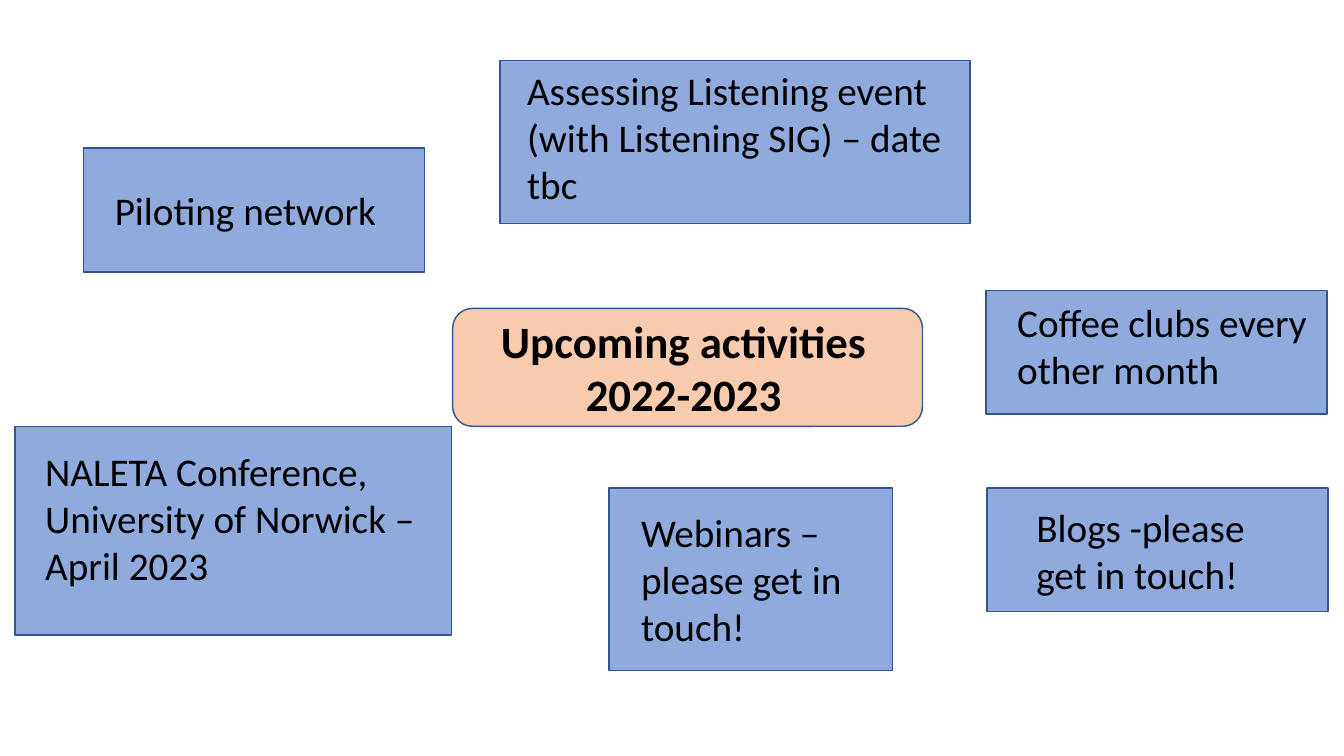
from typing import NamedTuple

from pptx import Presentation
from pptx.dml.color import RGBColor
from pptx.enum.shapes import MSO_SHAPE as Preset
from pptx.enum.text import MSO_AUTO_SIZE as AutoSize, PP_ALIGN as Align
from pptx.slide import Slide
from pptx.util import Inches, Pt

COLOURS = {
    "activity": "8FAADC",
    "title": "F8CBAD",
    "outline": "325491",
    "text": "000000",
}
ACTIVITY_FONT = {"name": "Calibri", "size": Pt(28), "bold": False}
TITLE_FONT = {"name": "Calibri", "size": Pt(32), "bold": True}


class Area(NamedTuple):
    left: float
    top: float
    width: float
    height: float


class Card(NamedTuple):
    wording: str
    frame: Area
    label: Area
    preset: Preset = Preset.RECTANGLE
    fill: str = "activity"
    font: dict = ACTIVITY_FONT
    align: Align = Align.LEFT


CARDS = [
    Card("Assessing Listening event (with Listening SIG) – date tbc",
         Area(4.96, 0.6, 4.66, 1.62), Area(5.13, 0.61, 4.5, 1.51)),
    Card("Blogs -please get in touch!",
         Area(9.79, 4.84, 3.38, 1.23), Area(10.18, 4.94, 2.81, 1.04)),
    Card("Coffee clubs every other month",
         Area(9.78, 2.88, 3.38, 1.23), Area(9.99, 2.91, 3.18, 1.04)),
    Card("Webinars – please get in touch!",
         Area(6.04, 4.84, 2.81, 1.81), Area(6.26, 4.99, 2.69, 1.51)),
    Card("NALETA Conference, University of Norwick – April 2023",
         Area(0.15, 4.23, 4.33, 2.07), Area(0.35, 4.39, 4.04, 1.51)),
    Card("Piloting network",
         Area(0.83, 1.47, 3.38, 1.23), Area(1.04, 1.8, 3.09, 0.57)),
    Card("Upcoming activities 2022-2023",
         Area(4.49, 3.06, 4.66, 1.17), Area(4.62, 3.06, 4.32, 1.18),
         Preset.ROUNDED_RECTANGLE, "title", TITLE_FONT, Align.CENTER),
]


def colour(name: str) -> RGBColor:
    return RGBColor.from_string(COLOURS[name])


def draw_frame(page: Slide, card: Card) -> None:
    box = page.shapes.add_shape(card.preset, *map(Inches, card.frame))
    box.shadow.inherit = False
    box.fill.solid()
    box.fill.fore_color.rgb = colour(card.fill)
    box.line.color.rgb = colour("outline")
    box.line.width = Pt(1)


def draw_label(page: Slide, card: Card) -> None:
    box = page.shapes.add_textbox(*map(Inches, card.label))
    box.text_frame.word_wrap = True
    box.text_frame.auto_size = AutoSize.SHAPE_TO_FIT_TEXT
    para = box.text_frame.paragraphs[0]
    para.alignment = card.align
    span = para.add_run()
    span.text = card.wording
    for attribute, value in card.font.items():
        setattr(span.font, attribute, value)
    span.font.color.rgb = colour("text")


def main() -> None:
    deck = Presentation()
    deck.slide_width, deck.slide_height = Inches(13.33), Inches(7.5)
    page = deck.slides.add_slide(deck.slide_layouts[6])
    for card in CARDS:
        draw_frame(page, card)
    for card in CARDS:
        draw_label(page, card)
    deck.save("out.pptx")


if __name__ == "__main__":
    main()
